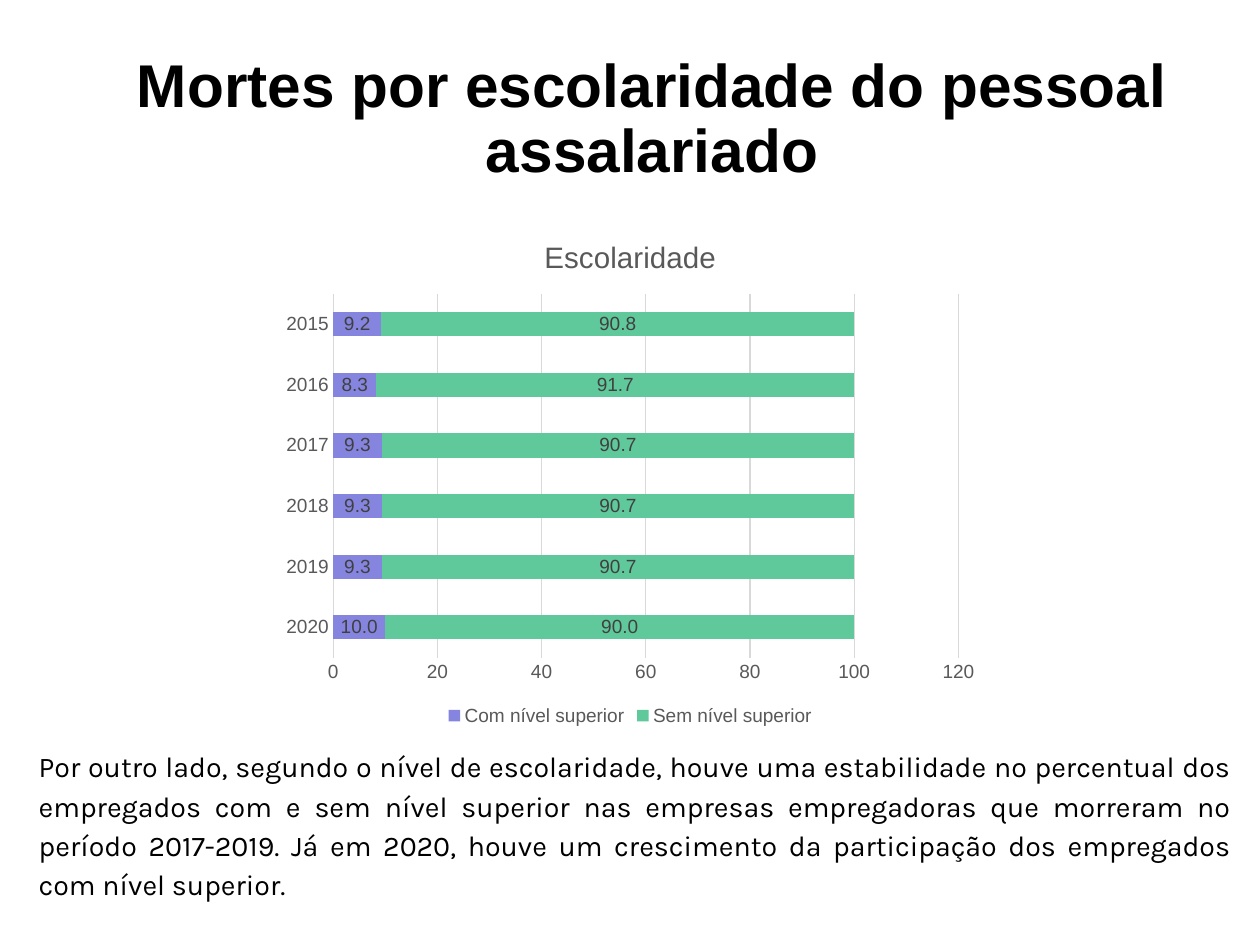
from pptx import Presentation
from pptx.chart.data import CategoryChartData
from pptx.dml.color import RGBColor
from pptx.enum.chart import XL_CHART_TYPE, XL_LABEL_POSITION, XL_LEGEND_POSITION, XL_TICK_MARK
from pptx.enum.text import MSO_ANCHOR, PP_ALIGN
from pptx.util import Cm, Inches, Pt

BAR_STACKED = XL_CHART_TYPE.BAR_STACKED
LABEL_CENTER = XL_LABEL_POSITION.CENTER
LEGEND_BOTTOM = XL_LEGEND_POSITION.BOTTOM
NO_TICK = XL_TICK_MARK.NONE
TOP, MIDDLE = MSO_ANCHOR.TOP, MSO_ANCHOR.MIDDLE
CENTER, JUSTIFY = PP_ALIGN.CENTER, PP_ALIGN.JUSTIFY

BLACK = RGBColor(0x00, 0x00, 0x00)
DARK_GREY = RGBColor(0x40, 0x40, 0x40)
GREY = RGBColor(0x59, 0x59, 0x59)
LIGHT_GREY = RGBColor(0xD9, 0xD9, 0xD9)
PURPLE = RGBColor(0x85, 0x85, 0xE0)
GREEN = RGBColor(0x60, 0xC9, 0x9C)

WITH_DEGREE = [10, 9.3, 9.3, 9.3, 8.3, 9.2]
SCHOOLING = {
    "Com nível superior": (WITH_DEGREE, PURPLE),
    "Sem nível superior": ([round(100 - share, 1) for share in WITH_DEGREE], GREEN),
}
HEADING = "Mortes por escolaridade do pessoal assalariado"
COMMENTARY = (
    "Por outro lado, segundo o nível de escolaridade, houve uma estabilidade no "
    "percentual dos empregados com e sem nível superior nas empresas empregadoras "
    "que morreram no período 2017-2019. Já em 2020, houve um crescimento da "
    "participação dos empregados com nível superior."
)


def style_font(font, size, color, name="Arial", bold=False):
    font.name, font.size, font.bold = name, Pt(size), bold
    font.color.rgb = color


def add_paragraph_box(box, text, anchor, paragraph_format, **font_format):
    """Place a one-paragraph wrapping text box; box is in inches."""
    frame = slide.shapes.add_textbox(*map(Inches, box)).text_frame
    frame.word_wrap = True
    frame.vertical_anchor = anchor
    paragraph = frame.paragraphs[0]
    for attribute, value in paragraph_format.items():
        setattr(paragraph, attribute, value)
    run = paragraph.add_run()
    run.text = text
    style_font(run.font, color=BLACK, **font_format)


prs = Presentation()
prs.slide_width = Cm(28)
prs.slide_height = Cm(21)
slide = prs.slides.add_slide(prs.slide_layouts[6])

add_paragraph_box((0.94, 0.4, 9.53, 1.31), HEADING, MIDDLE,
                  {"alignment": CENTER, "line_spacing": 0.9}, size=38, bold=True)

# Stacked bars, listed from the bottom year upwards
schooling_data = CategoryChartData(number_format="General")
schooling_data.categories = [str(year) for year in range(2020, 2014, -1)]
for level, (shares, _) in SCHOOLING.items():
    schooling_data.add_series(level, shares)
chart = slide.shapes.add_chart(
    BAR_STACKED, *map(Inches, (2.38, 1.89, 6.27, 4.5)), schooling_data).chart
style_font(chart.font, 10, BLACK)

chart.has_title = True
chart_title = chart.chart_title
chart_title.include_in_layout = False
chart_title.text_frame.text = "Escolaridade"
style_font(chart_title.text_frame.paragraphs[0].runs[0].font, 18.6, GREY)

chart.has_legend = True
chart.legend.position = LEGEND_BOTTOM
chart.legend.include_in_layout = False
style_font(chart.legend.font, 12, GREY)

years, percent = chart.category_axis, chart.value_axis
for axis in (years, percent):
    axis.major_tick_mark = axis.minor_tick_mark = NO_TICK
    style_font(axis.tick_labels.font, 12, GREY)
percent.minimum_scale, percent.maximum_scale, percent.major_unit = 0, 120, 20
percent.has_major_gridlines = True
percent.format.line.fill.background()
for line in (years.format.line, percent.major_gridlines.format.line):
    line.color.rgb = LIGHT_GREY
    line.width = Pt(0.75)

bars = chart.plots[0]
bars.gap_width, bars.overlap = 150, 100
bars.vary_by_categories = False
for series, (_, color) in zip(bars.series, SCHOOLING.values()):
    series.format.fill.solid()
    series.format.fill.fore_color.rgb = color
    series.invert_if_negative = False
    labels = series.data_labels
    labels.show_value = True
    labels.number_format, labels.number_format_is_linked = "#,##0.0", False
    labels.position = LABEL_CENTER
    style_font(labels.font, 12, DARK_GREY)

add_paragraph_box((0.24, 6.46, 10.63, 1.48), COMMENTARY, TOP,
                  {"alignment": JUSTIFY, "line_spacing": 1.15, "space_after": Pt(8)},
                  size=18, name="Karla")

prs.save("out.pptx")
